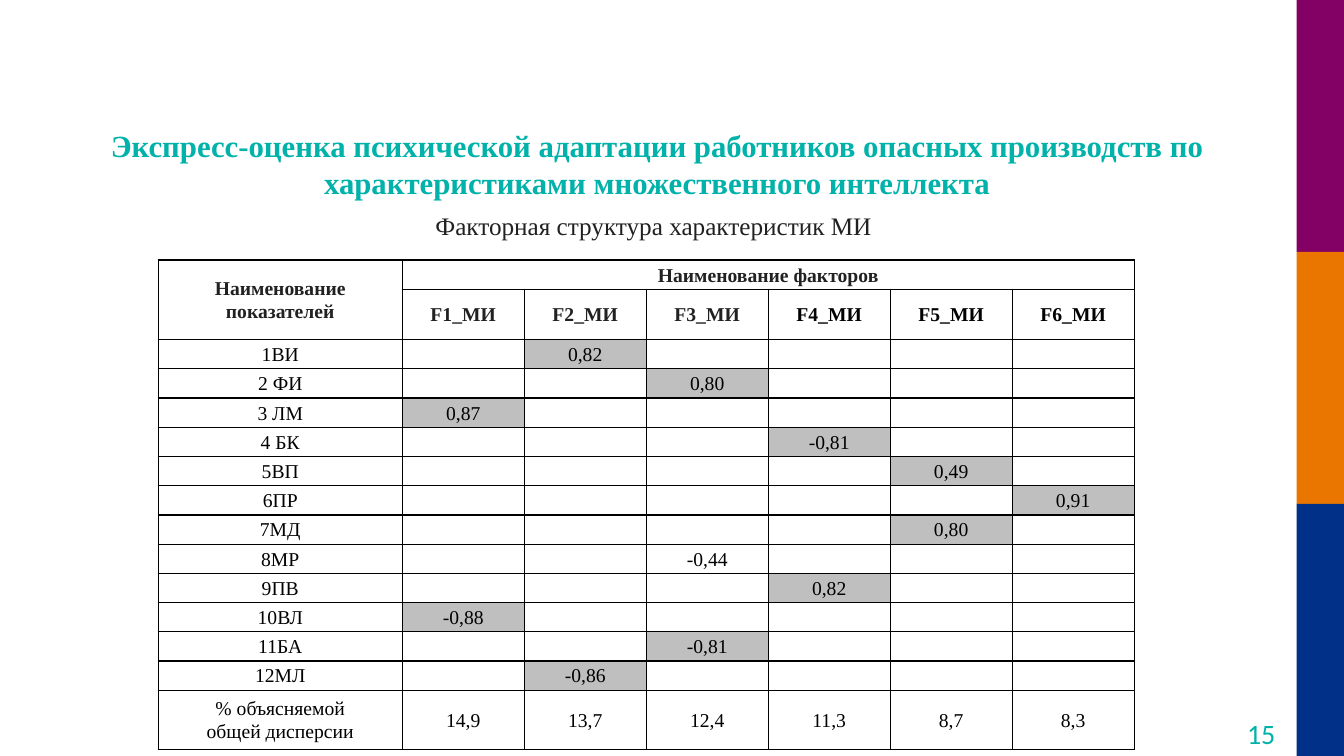
from dataclasses import dataclass

from lxml import etree
from pptx import Presentation
from pptx import util as u
from pptx.dml.color import RGBColor
from pptx.enum import shapes, text
from pptx.oxml import ns


@dataclass(frozen=True)
class Theme:
    stripes: tuple = ("830065", "EA7600", "003087")
    accent: str = "00B2A9"
    ink: str = "212121"
    black: str = "000000"
    mark: str = "BFBFBF"
    serif: str = "Times New Roman"
    sans: str = "Calibri"
    title: int = 22
    number: int = 20
    subtitle: int = 18
    body: int = 14


T = Theme()

FACTORS = ["F1_МИ", "F2_МИ", "F3_МИ", "F4_МИ", "F5_МИ", "F6_МИ"]
LOADINGS = [
    ("1ВИ", 2, "0,82"),
    ("2 ФИ", 3, "0,80"),
    ("3 ЛМ", 1, "0,87"),
    ("4 БК", 4, "-0,81"),
    ("5ВП", 5, "0,49"),
    ("6ПР", 6, "0,91"),
    ("7МД", 5, "0,80"),
    ("8МР", 3, "-0,44"),
    ("9ПВ", 4, "0,82"),
    ("10ВЛ", 1, "-0,88"),
    ("11БА", 3, "-0,81"),
    ("12МЛ", 2, "-0,86"),
]
UNMARKED = {"8МР"}
VARIANCE = ["14,9", "13,7", "12,4", "11,3", "8,7", "8,3"]


def write(tf, content, size=T.body, color=T.black, font=T.serif, bold=False,
          align=text.PP_ALIGN.CENTER, spacing=None):
    for i, line in enumerate(content.split("\n")):
        p = tf.add_paragraph() if i else tf.paragraphs[0]
        p.alignment = align
        if spacing:
            p.line_spacing = spacing
        if not line:
            p._p.get_or_add_endParaRPr().set("sz", str(size * 100))
            continue
        r = p.add_run()
        r.text = line
        r.font.size = u.Pt(size)
        r.font.name = font
        r.font.bold = bold
        r.font.color.rgb = RGBColor.from_string(color)


def add_text(s, box, content, wrap=True, **fmt):
    tf = s.shapes.add_textbox(*map(u.Inches, box)).text_frame
    tf.word_wrap = wrap
    write(tf, content, **fmt)
    return tf


def add_stripes(s, box):
    left, top, width, height = box
    step = height / len(T.stripes)
    for i, color in enumerate(T.stripes):
        sp = s.shapes.add_shape(shapes.MSO_SHAPE.RECTANGLE, u.Inches(left),
                                u.Inches(top + i * step), u.Inches(width), u.Inches(step))
        sp.shadow.inherit = False
        sp.fill.solid()
        sp.fill.fore_color.rgb = RGBColor.from_string(color)
        sp.line.fill.background()


def add_heading(s, box):
    left, top, width, height = box
    add_text(s, box,
             "Экспресс-оценка психической адаптации работников опасных производств "
             "по характеристиками множественного интеллекта",
             size=T.title, color=T.accent, bold=True)
    add_text(s, (left + 3.78, top + height - 0.01, 4.57, 0.4),
             "Факторная структура характеристик МИ", wrap=False,
             size=T.subtitle, color=T.ink, align=text.PP_ALIGN.LEFT)


def add_number(s, box):
    tf = add_text(s, box, "15", size=T.number, color=T.accent, font=T.sans,
                  align=text.PP_ALIGN.RIGHT)
    tf.margin_left = tf.margin_right = tf.margin_top = tf.margin_bottom = 0
    tf.vertical_anchor = text.MSO_ANCHOR.MIDDLE


def add_borders(cell):
    tcPr = cell._tc.get_or_add_tcPr()
    for side in ("lnL", "lnR", "lnT", "lnB"):
        ln = etree.SubElement(tcPr, ns.qn(f"a:{side}"), w=str(u.Pt(1)))
        fill = etree.SubElement(ln, ns.qn("a:solidFill"))
        etree.SubElement(fill, ns.qn("a:srgbClr"), val=T.black)


def fill_cell(cell, content="", marked=False, **fmt):
    cell.margin_left = cell.margin_right = u.Inches(0.07)
    cell.margin_top = cell.margin_bottom = 0
    cell.vertical_anchor = text.MSO_ANCHOR.MIDDLE
    add_borders(cell)
    if marked:
        cell.fill.solid()
        cell.fill.fore_color.rgb = RGBColor.from_string(T.mark)
    else:
        cell.fill.background()
    write(cell.text_frame, content, spacing=1.07, **fmt)


def add_loadings_table(s, box):
    left, top, width, height = box
    heights = [0.29, 0.5] + [0.29] * len(LOADINGS) + [0.59]
    widths = [width / 4] + [width / 8] * len(FACTORS)
    frame = s.shapes.add_table(len(heights), len(widths), *map(u.Inches, box))
    table = frame.table
    table.first_row = table.horz_banding = False
    for row, h in zip(table.rows, heights):
        row.height = u.Inches(h)
    for col, w in zip(table.columns, widths):
        col.width = u.Inches(w)
    table.cell(0, 0).merge(table.cell(1, 0))
    table.cell(0, 1).merge(table.cell(0, len(FACTORS)))

    blanks = [""] * len(FACTORS)
    rows = [["Наименование\nпоказателей", "Наименование факторов"] + blanks[1:],
            [""] + FACTORS]
    for name, factor, value in LOADINGS:
        rows.append([name] + blanks)
        rows[-1][factor] = value
    rows.append(["% объясняемой\nобщей дисперсии"] + VARIANCE)

    for i, row in enumerate(rows):
        header = i < 2
        loading = not header and i < len(rows) - 1
        for j, value in enumerate(row):
            marked = loading and j > 0 and value != "" and row[0] not in UNMARKED
            color = T.ink if header and j < 4 else T.black
            fill_cell(table.cell(i, j), value, marked, color=color, bold=header)


def build_factor_slide(prs):
    s = prs.slides.add_slide(prs.slide_layouts[6])
    add_stripes(s, (12.86, 0, 0.48, 7.5))
    add_number(s, (12.06, 7.14, 0.59, 0.27))
    add_loadings_table(s, (1.57, 2.58, 9.68, 4.86))
    add_heading(s, (0.44, 1.21, 12.15, 0.84))


def main():
    prs = Presentation()
    prs.slide_width, prs.slide_height = u.Inches(13.33), u.Inches(7.5)
    build_factor_slide(prs)
    prs.save("out.pptx")


if __name__ == "__main__":
    main()
